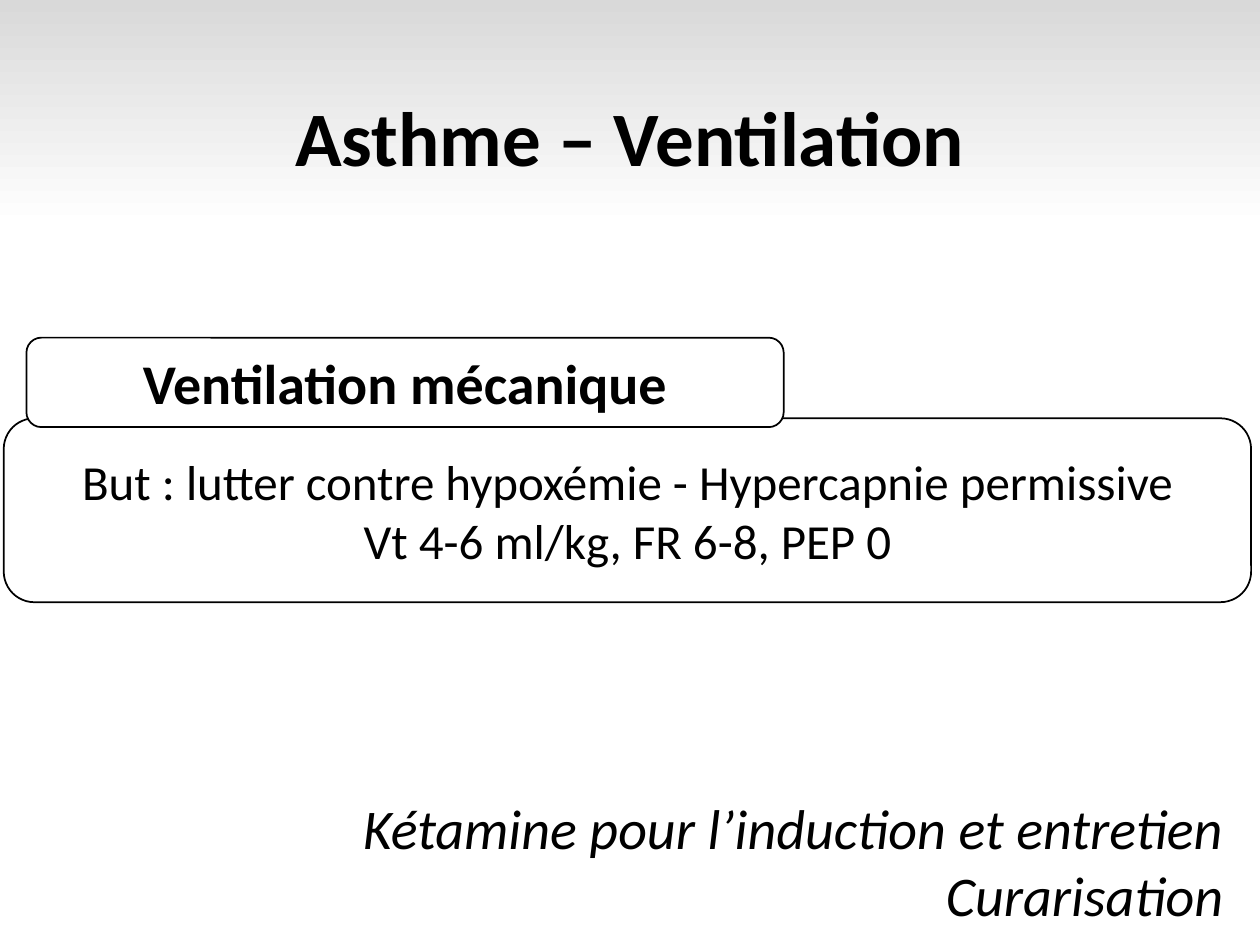
import copy
from dataclasses import dataclass

import pptx
import pptx.dml.color
import pptx.enum.shapes
import pptx.enum.text
import pptx.util
from pptx.util import Inches

ALIGN = pptx.enum.text.PP_ALIGN
ANCHOR = pptx.enum.text.MSO_ANCHOR
BLACK, WHITE, GREY = "000000", "FFFFFF", "D9D9D9"


@dataclass
class Box:
    left: float
    top: float
    width: float
    height: float

    def lengths(self):
        return [Inches(v) for v in (self.left, self.top, self.width, self.height)]


@dataclass
class Panel:
    box: Box
    lines: list[str]
    size: int
    bold: bool = False
    fill: str | None = None


def colour(hex_code: str):
    return pptx.dml.color.RGBColor.from_string(hex_code)


def write(shape, lines: list[str], *, size: int, bold=False, italic=False,
          align=ALIGN.CENTER, anchor=ANCHOR.MIDDLE, spacing=1.0):
    frame = shape.text_frame
    frame.word_wrap = True
    frame.vertical_anchor = anchor
    for index, line in enumerate(lines):
        paragraph = frame.add_paragraph() if index else frame.paragraphs[0]
        paragraph.alignment = align
        paragraph.line_spacing = spacing
        run = paragraph.add_run()
        run.text = line
        run.font.name = "Calibri"
        run.font.size = pptx.util.Pt(size)
        run.font.bold = bold
        run.font.italic = italic
        run.font.color.rgb = colour(BLACK)


def draw_panel(slide, panel: Panel):
    shape = slide.shapes.add_shape(
        pptx.enum.shapes.MSO_SHAPE.ROUNDED_RECTANGLE, *panel.box.lengths())
    shape.shadow.inherit = False
    if panel.fill:
        shape.fill.solid()
        shape.fill.fore_color.rgb = colour(panel.fill)
    else:
        shape.fill.background()
    shape.line.color.rgb = colour(BLACK)
    shape.line.width = pptx.util.Pt(1)
    write(shape, panel.lines, size=panel.size, bold=panel.bold)


def paint_background(slide):
    fill = slide.background.fill
    fill.gradient()
    fill.gradient_angle = 270
    for stop, (position, hex_code) in zip(fill.gradient_stops, [(0, GREY), (0.24, WHITE)]):
        stop.position = position
        stop.color.rgb = colour(hex_code)
    # Keep the rest of the page white with a last stop
    white_stop = slide.element.xpath(".//p:bg//a:gs")[-1]
    last_stop = copy.deepcopy(white_stop)
    last_stop.set("pos", "100000")
    white_stop.addnext(last_stop)


def main():
    deck = pptx.Presentation()
    deck.slide_width, deck.slide_height = Inches(10), Inches(7.5)
    slide = deck.slides.add_slide(deck.slide_layouts[6])
    paint_background(slide)

    # Title
    title = slide.shapes.add_textbox(*Box(0.69, 0.4, 8.62, 1.45).lengths())
    write(title, ["Asthme – Ventilation"], size=44, bold=True, spacing=0.9)

    # Settings panel with its heading tab in front
    for panel in (
        Panel(Box(0.03, 3.32, 9.9, 1.46),
              ["But : lutter contre hypoxémie - Hypercapnie permissive",
               "Vt 4-6 ml/kg, FR 6-8, PEP 0"], size=28),
        Panel(Box(0.21, 2.68, 6.01, 0.71),
              ["Ventilation mécanique"], size=32, bold=True, fill=WHITE),
    ):
        draw_panel(slide, panel)

    # Drug note
    sedation = slide.shapes.add_textbox(*Box(2.18, 6.25, 7.63, 1.18).lengths())
    write(sedation, ["Kétamine pour l’induction et entretien", "Curarisation"],
          size=32, italic=True, align=ALIGN.RIGHT, anchor=ANCHOR.TOP)

    deck.save("out.pptx")


if __name__ == "__main__":
    main()
